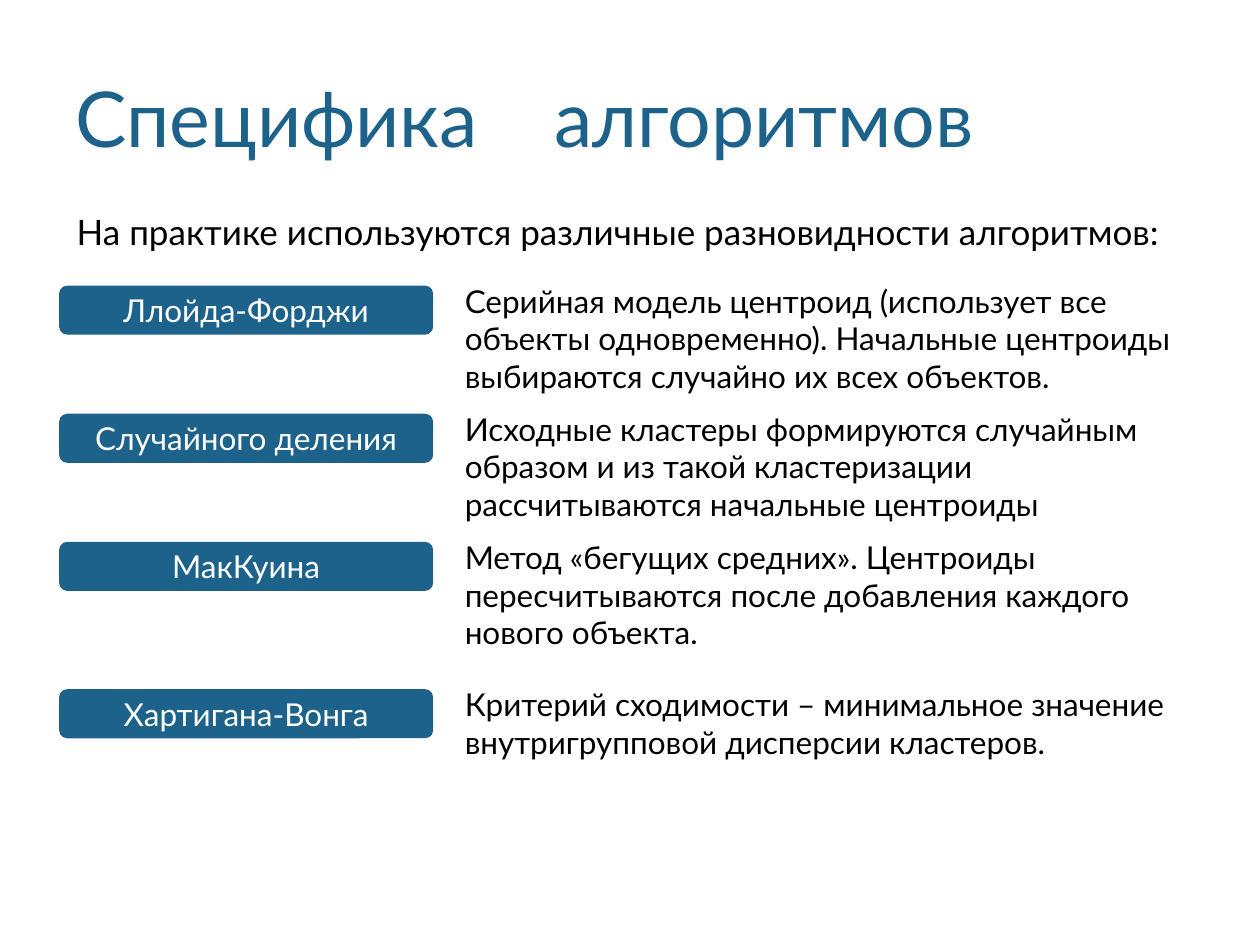
from pptx import Presentation
from pptx.dml.color import RGBColor
from pptx.enum import shapes, text
from pptx.util import Pt

BLUE, WHITE, BLACK = "1D628B", "FFFFFF", "000000"

# word, left, width
TITLE_WORDS = [("Специфика", 36, 290), ("алгоритмов", 309.6, 354)]
INTRO = "На практике используются различные разновидности алгоритмов:"
# name, description, top of the name plate
ALGORITHMS = [
    ("Ллойда-Форджи",
     "Серийная модель центроид (использует все объекты одновременно). "
     "Начальные центроиды выбираются случайно их всех объектов.", 163.2),
    ("Случайного деления",
     "Исходные кластеры формируются случайным образом и из такой "
     "кластеризации рассчитываются начальные центроиды", 236.4),
    ("МакКуина",
     "Метод «бегущих средних». Центроиды пересчитываются после "
     "добавления каждого нового объекта.", 309.6),
    ("Хартигана-Вонга",
     "Критерий сходимости – минимальное значение внутригрупповой "
     "дисперсии кластеров.", 393.8),
]
PLATE_LEFT, PLATE_WIDTH, PLATE_HEIGHT = 33.8, 213.8, 28.1
DESCRIPTION_LEFT, DESCRIPTION_WIDTH, DESCRIPTION_HEIGHT = 258.5, 433.4, 67.7
DESCRIPTION_RISE = 5.8  # description box starts this far above its plate


def rgb(color):
    return RGBColor.from_string(color)


def write(shape, words, size, color, anchor, align=text.PP_ALIGN.LEFT):
    frame = shape.text_frame
    frame.word_wrap = True
    frame.vertical_anchor = anchor
    paragraph = frame.paragraphs[0]
    paragraph.alignment = align
    run = paragraph.add_run()
    run.text = words
    run.font.name = "Lato"
    run.font.size = Pt(size)
    run.font.color.rgb = rgb(color)


def add_text(slide, words, box, size, color, anchor=text.MSO_ANCHOR.MIDDLE):
    write(slide.shapes.add_textbox(*map(Pt, box)), words, size, color, anchor)


def add_plate(slide, name, top):
    """Add the rounded plate that carries an algorithm's name."""
    plate = slide.shapes.add_shape(
        shapes.MSO_SHAPE.ROUNDED_RECTANGLE,
        Pt(PLATE_LEFT), Pt(top), Pt(PLATE_WIDTH), Pt(PLATE_HEIGHT))
    plate.shadow.inherit = False
    plate.fill.solid()
    plate.fill.fore_color.rgb = rgb(BLUE)
    plate.line.fill.background()
    write(plate, name, 18, WHITE, text.MSO_ANCHOR.MIDDLE, text.PP_ALIGN.CENTER)


def main():
    deck = Presentation()
    deck.slide_width, deck.slide_height = Pt(720), Pt(540)
    slide = deck.slides.add_slide(deck.slide_layouts[6])

    for word, left, width in TITLE_WORDS:
        add_text(slide, word, (left, 21.6, width, 90), 44, BLUE)
    add_text(slide, INTRO, (36.7, 112.3, 638, 39.6), 20, BLACK)

    for name, description, top in ALGORITHMS:
        add_plate(slide, name, top)
        box = (DESCRIPTION_LEFT, top - DESCRIPTION_RISE,
               DESCRIPTION_WIDTH, DESCRIPTION_HEIGHT)
        add_text(slide, description, box, 18, BLACK, text.MSO_ANCHOR.TOP)

    deck.save("out.pptx")


if __name__ == "__main__":
    main()
